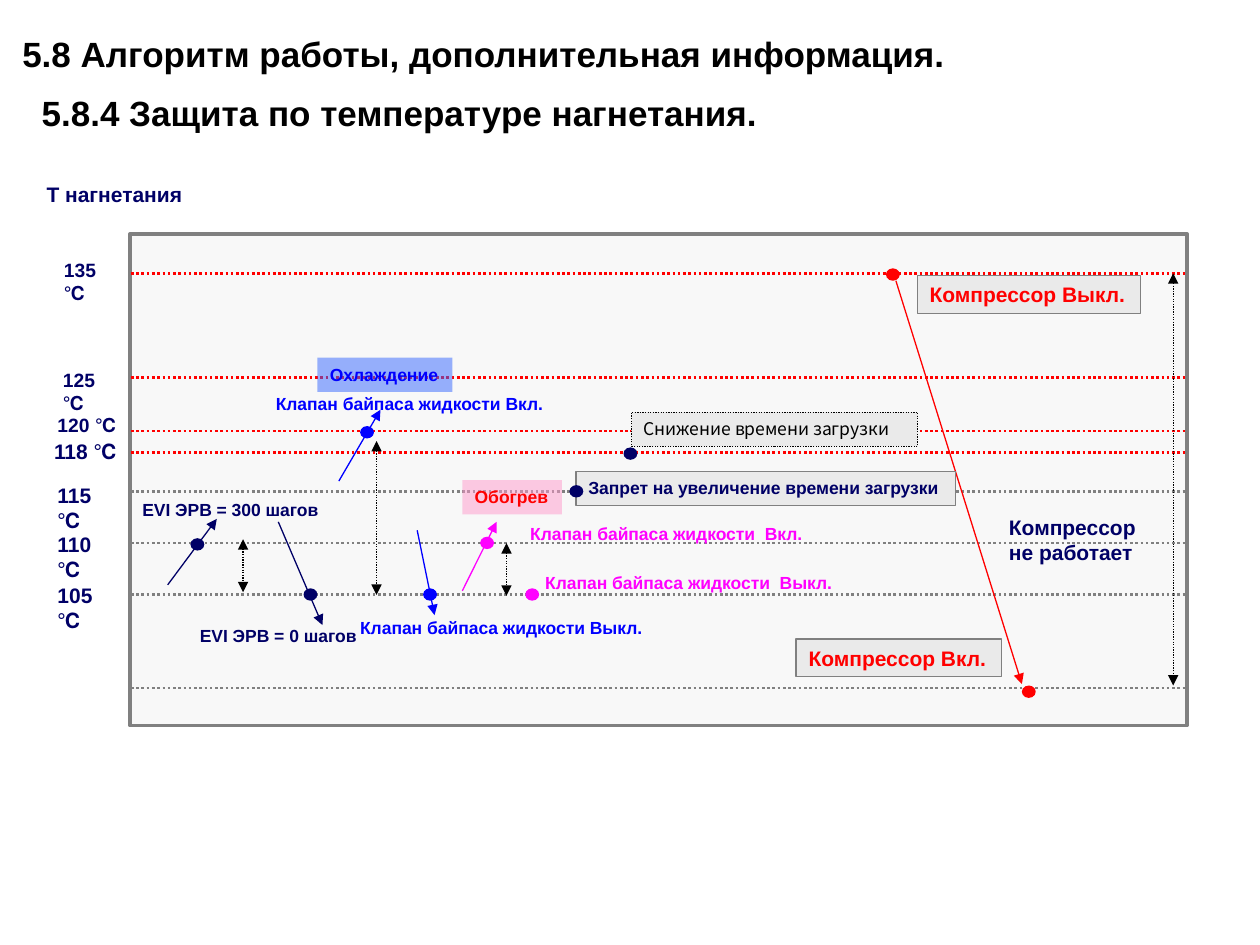
from dataclasses import dataclass

from lxml import etree
from pptx import Presentation
from pptx.dml.color import RGBColor
from pptx.enum.dml import MSO_LINE
from pptx.enum.shapes import MSO_CONNECTOR, MSO_SHAPE
from pptx.enum.text import MSO_ANCHOR, MSO_AUTO_SIZE, PP_ALIGN
from pptx.oxml.ns import qn
from pptx.util import Cm, Pt

RECT, OVAL = MSO_SHAPE.RECTANGLE, MSO_SHAPE.OVAL
STRAIGHT = MSO_CONNECTOR.STRAIGHT
DOTS = MSO_LINE.ROUND_DOT
TOP, LEFT = MSO_ANCHOR.TOP, PP_ALIGN.LEFT
GROW = MSO_AUTO_SIZE.SHAPE_TO_FIT_TEXT

BLACK = RGBColor(0, 0, 0)
NAVY = RGBColor(0, 0, 0x66)
BLUE = RGBColor(0, 0, 0xFF)
RED = RGBColor(0xFF, 0, 0)
PINK = RGBColor(0xFF, 0, 0xFF)
GRAY = RGBColor(0x80, 0x80, 0x80)
PALE = RGBColor(0xF8, 0xF8, 0xF8)
SILVER = RGBColor(0xEA, 0xEA, 0xEA)
SKY = RGBColor(0x33, 0x66, 0xFF)
ROSE = RGBColor(0xFF, 0x99, 0xCC)

HEIGHT = {10: 0.69, 11: 0.71, 12: 0.76}
SANS = {"name": "Arial", "bold": True}
KOREAN = {"name": "Noto Sans CJK KR", "bold": False}


@dataclass
class Label:
    text: str
    x: float
    y: float
    w: float
    size: int = 10
    color: RGBColor = NAVY
    wrap: bool = False
    font: dict | None = None
    fill: RGBColor | None = None
    edge: RGBColor | None = None
    dash: bool = False
    alpha: int = 100


@dataclass
class Arrow:
    x1: float
    y1: float
    x2: float
    y2: float
    color: RGBColor = BLACK
    both: bool = False


LEVELS = [(5.51, RED), (7.61, RED), (8.69, RED), (9.12, RED),
          (9.91, GRAY), (10.95, GRAY), (11.99, GRAY), (13.87, GRAY)]

ARROWS = [
    Arrow(6.83, 9.7, 7.67, 8.26, BLUE),
    Arrow(3.38, 11.79, 4.37, 10.46, NAVY),
    Arrow(5.61, 10.52, 6.5, 12.6, NAVY),
    Arrow(8.41, 10.69, 8.76, 12.4, BLUE),
    Arrow(9.32, 11.91, 10.01, 10.52, PINK),
    Arrow(18.06, 5.66, 20.6, 13.79, RED),
    Arrow(4.9, 10.87, 4.9, 11.94, both=True),
    Arrow(7.59, 8.89, 7.59, 11.99, both=True),
    Arrow(10.21, 10.95, 10.21, 12.01, both=True),
    Arrow(23.65, 5.51, 23.65, 13.82, both=True),
]

POINTS = [
    (3.84, 10.85, NAVY), (6.12, 11.86, NAVY), (7.26, 8.59, BLUE),
    (8.53, 11.86, BLUE), (9.68, 10.82, PINK), (10.59, 11.86, PINK),
    (11.48, 9.78, NAVY), (12.57, 9.02, NAVY), (17.86, 5.41, RED),
    (20.6, 13.82, RED),
]

BOXES = [
    Label("Охлаждение", 6.4, 7.21, 2.72, color=BLUE, fill=SKY, alpha=50),
    Label("Обогрев", 9.32, 9.68, 2.01, color=RED, fill=ROSE, alpha=50),
    Label("Запрет на увеличение времени загрузки", 11.61, 9.5, 7.65,
          fill=SILVER, edge=GRAY),
    Label("Снижение времени загрузки", 12.73, 8.31, 5.77, color=BLACK,
          font=KOREAN, fill=SILVER, edge=BLACK, dash=True),
    Label("Компрессор Выкл.", 18.49, 5.56, 4.5, 12, RED,
          fill=SILVER, edge=GRAY),
    Label("Компрессор Вкл.", 16.05, 12.88, 4.14, 12, RED,
          fill=SILVER, edge=GRAY),
]

LABELS = [
    Label("Т нагнетания", 0.69, 3.53, 6.5, 12, wrap=True),
    Label("135 ℃", 1.04, 5.08, 1.65, 11),
    Label("125 ℃", 1.02, 7.29, 1.65, 11),
    Label("120 ℃", 0.91, 8.2, 1.83, 11, wrap=True),
    Label("118 ℃", 0.84, 8.71, 1.83, 12, wrap=True),
    Label("115 ℃", 0.91, 9.6, 1.75, 12),
    Label("110 ℃", 0.91, 10.59, 1.75, 12),
    Label("105 ℃", 0.91, 11.61, 1.75, 12),
    Label("EVI ЭРВ = 300 шагов", 2.62, 9.93, 4.09),
    Label("EVI ЭРВ = 0 шагов", 3.78, 12.47, 3.71),
    Label("Клапан байпаса жидкости Вкл.", 5.31, 7.8, 5.94, color=BLUE),
    Label("Клапан байпаса жидкости Выкл.", 7.01, 12.32, 6.25, color=BLUE),
    Label("Клапан байпаса жидкости  Вкл.", 10.44, 10.41, 6.05, color=PINK),
    Label("Клапан байпаса жидкости  Выкл.", 10.74, 11.4, 6.35, color=PINK),
    Label("Компрессор\nне работает", 20.09, 10.24, 3.23, 12),
]

TITLE = Label("5.8 Алгоритм работы, дополнительная информация.\n"
              "5.8.4 Защита по температуре нагнетания.",
              0.2, 0.53, 22.25, 20, BLACK, wrap=True)


def apply(item, values: dict) -> None:
    for key, value in values.items():
        setattr(item, key, value)


def shape(slide, kind, x: float, y: float, w: float, h: float,
          fill: RGBColor, edge: RGBColor | None = None, width: float = 0.75):
    item = slide.shapes.add_shape(kind, Cm(x), Cm(y), Cm(w), Cm(h))
    item.shadow.inherit = False
    item.fill.solid()
    item.fill.fore_color.rgb = fill
    if edge is None:
        item.line.fill.background()
    else:
        item.line.color.rgb = edge
        item.line.width = Pt(width)
    return item


def line(slide, arrow: Arrow, width: float = 0.75, dash: bool = False,
         ends: tuple = ()) -> None:
    item = slide.shapes.add_connector(
        STRAIGHT, Cm(arrow.x1), Cm(arrow.y1), Cm(arrow.x2), Cm(arrow.y2))
    item.line.color.rgb = arrow.color
    item.line.width = Pt(width)
    if dash:
        item.line.dash_style = DOTS
    props = item.line._get_or_add_ln()
    for end in ends:
        etree.SubElement(props, qn(end), type="triangle")
    etree.SubElement(item._element.spPr, qn("a:effectLst"))


def write(slide, label: Label):
    lines = label.text.split("\n")
    tall = HEIGHT.get(label.size, 1.2) + (len(lines) - 1) * 0.51
    if label.fill is None:
        item = slide.shapes.add_textbox(
            Cm(label.x), Cm(label.y), Cm(label.w), Cm(tall))
    else:
        item = shape(slide, RECT, label.x, label.y, label.w, tall,
                     label.fill, label.edge)
        if label.dash:
            item.line.dash_style = DOTS
        if label.alpha < 100:
            tint = item._element.spPr.find(".//" + qn("a:srgbClr"))
            etree.SubElement(tint, qn("a:alpha"), val=str(label.alpha * 1000))
    frame = item.text_frame
    frame.text = label.text
    apply(frame, {"word_wrap": label.wrap, "auto_size": GROW,
                  "vertical_anchor": TOP})
    for para in frame.paragraphs:
        para.alignment = LEFT
        for run in para.runs:
            apply(run.font, {**(label.font or SANS), "size": Pt(label.size)})
            run.font.color.rgb = label.color
    return item


def main() -> None:
    deck = Presentation()
    apply(deck, {"slide_width": Cm(25.4), "slide_height": Cm(19.05)})
    slide = deck.slides.add_slide(deck.slide_layouts[6])
    shape(slide, RECT, 2.62, 4.72, 21.31, 9.91, PALE, GRAY, 2)
    for y, color in LEVELS:
        line(slide, Arrow(2.64, y, 23.9, y, color), 1.5, True)
    for arrow in ARROWS:
        ends = ("a:headEnd", "a:tailEnd") if arrow.both else ("a:tailEnd",)
        line(slide, arrow, dash=arrow.both, ends=ends)
    for label in BOXES + LABELS:
        write(slide, label)
    for x, y, color in POINTS:
        shape(slide, OVAL, x, y, 0.28, 0.25, color)
    head = write(slide, TITLE)
    head.height = Cm(2.39)
    for para in head.text_frame.paragraphs:
        para.space_before = Pt(10)
    para._p.get_or_add_pPr().set("marL", str(Cm(0.39)))
    deck.save("out.pptx")


if __name__ == "__main__":
    main()
